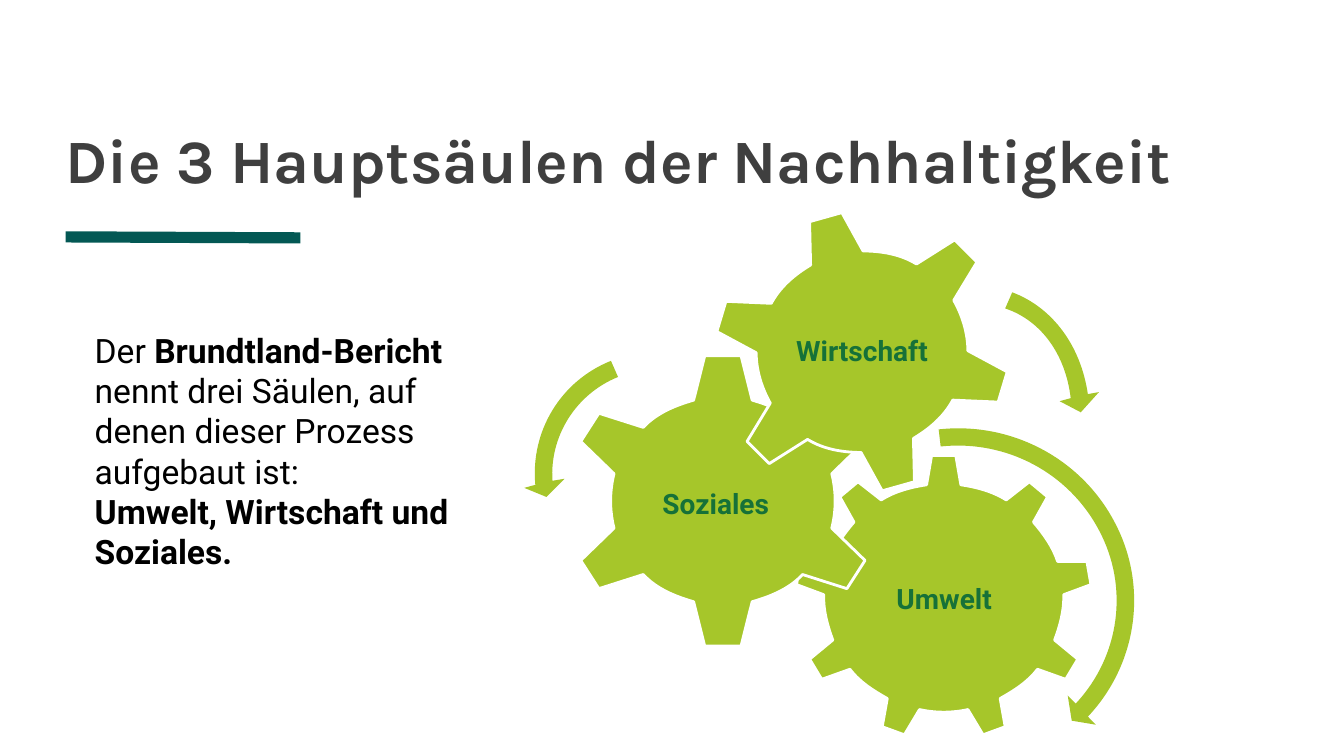
from dataclasses import dataclass
from math import atan2, pi, tan
from typing import Any

from lxml.etree import SubElement
from pptx import Presentation
from pptx.dml.color import RGBColor
from pptx.enum.shapes import MSO_CONNECTOR
from pptx.enum.text import MSO_ANCHOR, MSO_AUTO_SIZE, PP_ALIGN
from pptx.oxml.ns import qn
from pptx.util import Inches, Pt

Point = tuple[float, float]
Segment = tuple[float, ...]
Tooth = list[Point]
Box = tuple[float, float, float, float]


@dataclass(frozen=True)
class Theme:
    lime: RGBColor = RGBColor(0xA6, 0xC6, 0x2A)
    label: RGBColor = RGBColor(0x16, 0x71, 0x38)
    rule: RGBColor = RGBColor(0x03, 0x58, 0x54)
    heading: RGBColor = RGBColor(0x3F, 0x3F, 0x3F)
    text: RGBColor = RGBColor(0, 0, 0)
    white: RGBColor = RGBColor(0xFF, 0xFF, 0xFF)
    heading_font: str = "Karla"
    body_font: str = "Roboto"
    heading_size: Pt = Pt(44)
    body_size: Pt = Pt(24)
    label_size: Pt = Pt(20)


@dataclass(frozen=True)
class Gear:
    name: str
    centre: Point
    label_box: Box
    teeth: list[Tooth]


@dataclass(frozen=True)
class CurvedArrow:
    start: Point
    segments: list[Segment]


THEME = Theme()


def turned(teeth: list[Tooth]) -> list[Tooth]:
    return teeth + [[(-x, -y) for x, y in tooth] for tooth in teeth]


def mirrored(teeth: list[Tooth]) -> list[Tooth]:
    return teeth + [[(-x, y) for x, y in tooth[::-1]] for tooth in teeth[:0:-1]]


GEARS = [
    Gear("Umwelt", (9.36, 5.94), (8.48, 5.23, 1.77, 1.46), mirrored([
        [(-0.17, -1.13), (-0.12, -1.42), (0.12, -1.42), (0.17, -1.13)],
        [(0.62, -0.98), (0.85, -1.16), (1.03, -1.01), (0.89, -0.76)],
        [(1.13, -0.37), (1.42, -0.37), (1.46, -0.14), (1.19, -0.04)],
        [(1.19 - 0.09, 0.41), (1.33, 0.6), (1.21, 0.8), (0.93, 0.7)],
        [(0.56, 0.99), (0.61, 1.27), (0.39, 1.35), (0.24, 1.1)],
    ])),
    Gear("Soziales", (7.17, 4.97), (6.31, 4.29, 1.58, 1.45), turned([
        [(-0.29, -1), (-0.18, -1.44), (0.18, -1.44), (0.29, -1)],
        [(0.79, -0.73), (1.23, -0.87), (1.41, -0.59), (1.08, -0.27)],
        [(1.08, 0.27), (1.41, 0.59), (1.23, 0.87), (0.79, 0.73)],
    ])),
    Gear("Wirtschaft", (8.55, 3.49), (7.72, 2.7, 1.66, 1.6), turned([
        [(-0.51, -0.86), (-0.52, -1.29), (-0.2, -1.38), (0.01, -1)],
        [(0.54, -0.87), (0.92, -1.11), (1.14, -0.89), (0.91, -0.51)],
        [(1.05, -0.01), (1.44, 0.2), (1.35, 0.5), (0.9, 0.48)],
    ])),
]

ARROWS = [
    CurvedArrow((9.31, 4.26), [
        (10.03, 4.18, 10.73, 4.55, 11.06, 5.19),
        (11.39, 5.82, 11.28, 6.59, 10.79, 7.11),
        (10.87, 7.19), (10.63, 7.15), (10.59, 6.9), (10.67, 6.98),
        (11.11, 6.51, 11.2, 5.82, 10.9, 5.26),
        (10.6, 4.69, 9.98, 4.36, 9.33, 4.43),
    ]),
    CurvedArrow((6.06, 3.58), [
        (6.13, 3.74), (5.71, 3.91, 5.45, 4.33, 5.48, 4.77),
        (5.6, 4.75), (5.42, 4.93), (5.2, 4.84), (5.31, 4.81),
        (5.26, 4.28, 5.56, 3.78, 6.06, 3.58),
    ]),
    CurvedArrow((10.04, 2.9), [
        (10.44, 3.05, 10.72, 3.43, 10.79, 3.91),
        (10.9, 3.89), (10.72, 4.09), (10.51, 3.98), (10.62, 3.95),
        (10.57, 3.52, 10.33, 3.18, 9.97, 3.06),
    ]),
]


def set_all(target: Any, **values: Any) -> None:
    for name, value in values.items():
        setattr(target, name, value)


def style_run(r: Any, color: RGBColor, **values: Any) -> None:
    set_all(r.font, **values)
    r.font.color.rgb = color


def set_margins(tf: Any, x: float, y: float) -> None:
    set_all(tf, margin_left=Inches(x), margin_right=Inches(x),
            margin_top=Inches(y), margin_bottom=Inches(y))


def add_text_box(s: Any, box: Box) -> Any:
    tf = s.shapes.add_textbox(*map(Inches, box)).text_frame
    tf.word_wrap = True
    return tf


def add_outline(s: Any, start: Point, segments: list[Segment]) -> Any:
    builder = s.shapes.build_freeform(*map(Inches, start), scale=1.0)
    builder.add_line_segments(
        [(Inches(x), Inches(y)) for seg in segments for x, y in zip(seg[::2], seg[1::2])],
        close=True)
    sp = builder.convert_to_shape()
    nodes = iter(list(sp._element.iter(qn("a:lnTo"))))
    for seg in segments:
        node = next(nodes)
        if len(seg) == 6:
            curve = SubElement(node.getparent(), qn("a:cubicBezTo"))
            node.addprevious(curve)
            for part in (node, next(nodes), next(nodes)):
                curve.append(part[0])
                part.getparent().remove(part)
    sp.shadow.inherit = False
    sp.fill.solid()
    sp.fill.fore_color.rgb = THEME.lime
    sp.line.fill.background()
    return sp


def rim(a: Point, b: Point) -> Segment:
    sweep = (atan2(b[1], b[0]) - atan2(a[1], a[0])) % (2 * pi)
    k = 4 / 3 * tan(sweep / 4)
    return (a[0] - k * a[1], a[1] + k * a[0], b[0] + k * b[1], b[1] - k * b[0], *b)


def add_gear(s: Any, gear: Gear) -> None:
    centre = gear.centre
    segments: list[Segment] = []
    for tooth, after in zip(gear.teeth, gear.teeth[1:] + gear.teeth[:1]):
        segments += [*tooth[1:], rim(tooth[-1], after[0])]
    placed = [tuple(v + centre[i % 2] for i, v in enumerate(seg)) for seg in segments]
    sp = add_outline(s, placed[-1][-2:], placed)
    sp.line.color.rgb = THEME.white
    sp.line.width = Pt(2)
    tf = add_text_box(s, gear.label_box)
    tf.vertical_anchor = MSO_ANCHOR.MIDDLE
    set_margins(tf, 0.03, 0.03)
    p = tf.paragraphs[0]
    set_all(p, alignment=PP_ALIGN.CENTER, line_spacing=0.9)
    r = p.add_run()
    r.text = gear.name
    style_run(r, THEME.label, name=THEME.body_font, size=THEME.label_size, bold=True)


def add_heading(s: Any) -> None:
    line = s.shapes.add_connector(
        MSO_CONNECTOR.STRAIGHT, Inches(0.65), Inches(2.35), Inches(2.98), Inches(2.36))
    line.line.color.rgb = THEME.rule
    line.line.width = Pt(8)
    SubElement(line._element.spPr, qn("a:effectLst"))
    sp = s.shapes.title
    set_all(sp, left=Inches(0.65), top=Inches(0.22), width=Inches(12), height=Inches(1.72))
    tf = sp.text_frame
    set_all(tf, word_wrap=True, auto_size=MSO_AUTO_SIZE.NONE, vertical_anchor=MSO_ANCHOR.BOTTOM)
    set_margins(tf, 0, 0)
    p = tf.paragraphs[0]
    set_all(p, alignment=PP_ALIGN.LEFT, line_spacing=0.8)
    r = p.add_run()
    r.text = "Die 3 Hauptsäulen der Nachhaltigkeit"
    style_run(r, THEME.heading, name=THEME.heading_font, size=THEME.heading_size, bold=True)


def add_report_text(s: Any) -> None:
    tf = add_text_box(s, (0.84, 3.22, 3.99, 2.52))
    tf.auto_size = MSO_AUTO_SIZE.SHAPE_TO_FIT_TEXT
    paragraphs = [
        [("Der ", False), ("Brundtland-Bericht", True),
         (" nennt drei Säulen, auf denen dieser Prozess aufgebaut ist:", False)],
        [("Umwelt, Wirtschaft und Soziales.", True)],
    ]
    for i, runs in enumerate(paragraphs):
        p = tf.add_paragraph() if i else tf.paragraphs[0]
        for text, bold in runs:
            r = p.add_run()
            r.text = text
            style_run(r, THEME.text, name=THEME.body_font, size=THEME.body_size, bold=bold)


def main() -> None:
    prs = Presentation()
    set_all(prs, slide_width=Inches(13.33), slide_height=Inches(7.5))
    s = prs.slides.add_slide(prs.slide_layouts[5])
    add_heading(s)
    for gear in GEARS:
        add_gear(s, gear)
    for arrow in ARROWS:
        add_outline(s, arrow.start, arrow.segments)
    add_report_text(s)
    prs.save("out.pptx")


if __name__ == "__main__":
    main()
